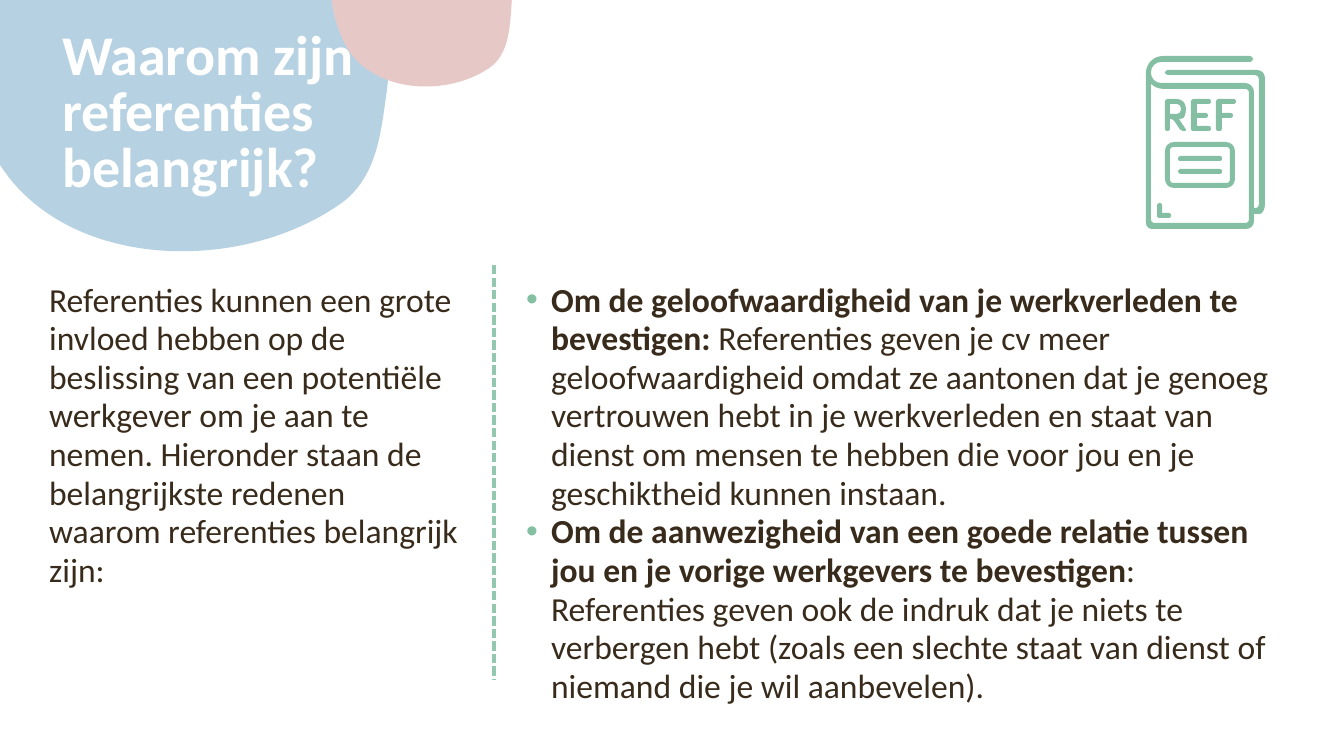
from dataclasses import dataclass
from math import cos, dist, radians, sin

from lxml.etree import SubElement
from pptx import Presentation
from pptx.dml.color import RGBColor
from pptx.enum.dml import MSO_LINE_DASH_STYLE as Dash
from pptx.enum.shapes import MSO_CONNECTOR as Connector
from pptx.enum.text import MSO_ANCHOR as Anchor, MSO_AUTO_SIZE as AutoSize, PP_ALIGN as Align
from pptx.oxml.ns import qn
from pptx.util import Pt

EMU_PER_PX = 914400 / 100.8


@dataclass(frozen=True)
class Theme:
    """Colours, font and type sizes of the slide."""
    font: str = "Calibri"
    ink: str = "382B1B"
    white: str = "FFFFFF"
    blue: str = "B6D1E1"
    pink: str = "E6C8C7"
    green: str = "84BFA4"
    divider: str = "94C7B0"
    title_size: float = 40
    title_leading: float = 40.2
    body_size: float = 24
    body_leading: float = 27.6


THEME = Theme()

TITLE = "Waarom zijn referenties belangrijk?"
INTRO = (
    "Referenties kunnen een grote invloed hebben op de beslissing van een potentiële "
    "werkgever om je aan te nemen. Hieronder staan de belangrijkste redenen waarom "
    "referenties belangrijk zijn:"
)
REASONS = [
    [
        ("Om de geloofwaardigheid van je werkverleden te bevestigen: ", True),
        ("Referenties geven je cv meer geloofwaardigheid omdat ze aantonen dat je genoeg "
         "vertrouwen hebt in je werkverleden en staat van dienst om mensen te hebben die "
         "voor jou en je geschiktheid kunnen instaan.", False),
    ],
    [
        ("Om de aanwezigheid van een goede relatie tussen jou en je vorige werkgevers "
         "te bevestigen", True),
        (": Referenties geven ook de indruk dat je niets te verbergen hebt (zoals een "
         "slechte staat van dienst of niemand die je wil aanbevelen).", False),
    ],
]

BLOB_TURN = 71.8
BLUE_FRAME = (-29, -170, 419, 432)
BLUE_BLOB = [
    [(391, 23)],
    [(389, -34), (371, -91), (309, -117)], [(251, -142), (163, -157), (100, -146)],
    [(-49, -119), (-71, 29), (-8, 151)], [(53, 270), (238, 278), (343, 202)],
    [(374, 178), (380, 140), (385, 104)], [(389, 78), (391, 50), (391, 23)],
]
PINK_FRAME = (337, -91, 176, 181)
PINK_BLOB = [
    [(512, -9)],
    [(511, -34), (504, -57), (479, -69)], [(454, -79), (417, -86), (390, -81)],
    [(328, -69), (319, -7), (345, 44)], [(371, 94), (449, 98), (492, 66)],
    [(505, 55), (508, 39), (510, 24)], [(511, 13), (512, 2), (512, -9)],
]

BOOK_COVER = [
    (1146, 229, 6), (1146, 56, 17), (1253, 56, 3), (1253, 62, 3), (1151, 62, 10),
    (1151, 83, 10), (1254, 83, 9), (1254, 208, 0), (1259, 208, 4), (1259, 75, 4),
    (1165, 75, 3), (1165, 70, 3), (1265, 70, 8), (1265, 214, 10), (1254, 214, 0),
    (1254, 229, 8),
]
BOOK_FACE = [(1151, 84, 0), (1151, 223, 3), (1249, 223, 3), (1249, 89, 3), (1158, 89, 7)]
LETTER_R = [
    (1165, 99, 2), (1186, 99, 9), (1186, 118, 9), (1179, 119, 0), (1187, 131, 2),
    (1181, 131, 2), (1173, 119, 2), (1170, 119, 0), (1170, 131, 2), (1165, 131, 2),
]
R_BOWL = [(1170, 104, 0), (1181, 104, 4), (1181, 114, 4), (1170, 114, 0)]
CORNER_MARK = [
    (1157, 203, 2), (1162, 203, 2), (1162, 213, 0), (1171, 213, 2), (1171, 218, 2),
    (1157, 218, 2),
]


def px(length):
    """Turn pixels into EMU."""
    return round(length * EMU_PER_PX)


def rgb(colour):
    """Read a hexadecimal colour."""
    return RGBColor.from_string(colour)


def blend(start, end, share):
    """Return the point at a share of the way from start to end."""
    return tuple(p + (q - p) * share for p, q in zip(start, end))


def rounded(corners):
    """Return the segments of a polygon whose corners have radii."""
    segments = []
    for index, (x, y, radius) in enumerate(corners):
        corner = (x, y)
        before, after = (
            blend(corner, near[:2], min(radius / dist(corner, near[:2]), 0.5))
            for near in (corners[index - 1], corners[(index + 1) % len(corners)])
        )
        segments.append([before])
        if radius:
            segments.append([blend(before, corner, 0.55), blend(after, corner, 0.55), after])
    return segments


def rectangle(left, top, right, bottom, radius):
    """Return the corners of a rounded rectangle."""
    return [(left, top, radius), (right, top, radius),
            (right, bottom, radius), (left, bottom, radius)]


def add_outline(shapes, colour, frame, contours, turn=0):
    """Draw a filled curved outline in a turned frame; later contours are holes."""
    left, top, width, height = frame
    builder = shapes.build_freeform(px(left), px(top))
    builder.add_line_segments([(px(left + width), px(top)),
                               (px(left + width), px(top + height)),
                               (px(left), px(top + height))])
    shape = builder.convert_to_shape()
    shape.shadow.inherit = False
    shape.fill.solid()
    shape.fill.fore_color.rgb = rgb(colour)
    shape.line.fill.background()
    shape.rotation = turn
    route = shape.element.find(".//" + qn("a:path"))
    for step in list(route):
        route.remove(step)
    cosine, sine = cos(radians(turn)), sin(radians(turn))
    for contour in contours:
        for index, points in enumerate(contour):
            tag = "a:cubicBezTo" if len(points) == 3 else "a:lnTo" if index else "a:moveTo"
            step = SubElement(route, qn(tag))
            for x, y in points:
                dx, dy = x - left - width / 2, y - top - height / 2
                SubElement(step, qn("a:pt"),
                           x=str(px(width / 2 + dx * cosine + dy * sine)),
                           y=str(px(height / 2 - dx * sine + dy * cosine)))
        SubElement(route, qn("a:close"))
    return shape


def add_icon_part(shapes, *polygons):
    """Draw one rounded part of the icon."""
    xs, ys, _ = zip(*polygons[0])
    frame = (min(xs), min(ys), max(xs) - min(xs), max(ys) - min(ys))
    add_outline(shapes, THEME.green, frame, [rounded(polygon) for polygon in polygons])


def add_book(page):
    """Draw the reference book icon."""
    shapes = page.shapes.add_group_shape().shapes
    arms = [(0, 99, 2), (20, 99, 2), (20, 104, 2), (6, 104, 0), (6, 113, 0),
            (17, 113, 2), (17, 118, 2), (6, 118, 0)]
    letter_e = arms + [(6, 126, 0), (20, 126, 2), (20, 131, 2), (0, 131, 2)]
    letter_f = arms + [(6, 131, 2), (0, 131, 2)]
    add_icon_part(shapes, BOOK_COVER, BOOK_FACE)
    add_icon_part(shapes, rectangle(1165, 142, 1235, 188, 9),
                  rectangle(1170, 147, 1230, 183, 3))
    add_icon_part(shapes, LETTER_R, R_BOWL)
    for left, letter in ((1191, letter_e), (1216, letter_f)):
        add_icon_part(shapes, [(left + x, y, radius) for x, y, radius in letter])
    add_icon_part(shapes, CORNER_MARK)
    for top in (156, 169):
        add_icon_part(shapes, rectangle(1178, top, 1222, top + 5, 2))


def add_divider(page, x, top, bottom):
    """Draw the dashed line between the columns."""
    line = page.shapes.add_connector(Connector.STRAIGHT, px(x), px(top), px(x), px(bottom))
    line.line.color.rgb = rgb(THEME.divider)
    line.line.width = Pt(2.25)
    line.line.dash_style = Dash.SQUARE_DOT
    SubElement(line.element.spPr, qn("a:effectLst"))
    return line


def set_bullet(para, bulleted):
    """Give a paragraph a green bullet or none."""
    props = para._p.get_or_add_pPr()
    indent = px(25) if bulleted else 0
    props.set("marL", str(indent))
    props.set("indent", str(-indent))
    if bulleted:
        colour = SubElement(props, qn("a:buClr"))
        SubElement(colour, qn("a:srgbClr"), val=THEME.green)
        SubElement(props, qn("a:buFont"), typeface="Arial")
        SubElement(props, qn("a:buChar"), char="•")
    else:
        SubElement(props, qn("a:buNone"))


def fill_text(box, place, paras, size, leading, colour, bulleted=False):
    """Place a placeholder and write its paragraphs run by run."""
    box.left, box.top, box.width, box.height = map(px, place)
    frame = box.text_frame
    frame.word_wrap = True
    frame.auto_size = AutoSize.NONE
    frame.vertical_anchor = Anchor.TOP
    for index, spans in enumerate(paras):
        para = frame.add_paragraph() if index else frame.paragraphs[0]
        para.alignment = Align.LEFT
        para.line_spacing = Pt(leading)
        para.space_before = para.space_after = Pt(0)
        set_bullet(para, bulleted)
        for text, bold in spans:
            span = para.add_run()
            span.text = text
            span.font.name = THEME.font
            span.font.size = Pt(size)
            span.font.bold = bold
            span.font.color.rgb = rgb(colour)


def main():
    """Build and save the slide."""
    deck = Presentation()
    deck.slide_width, deck.slide_height = px(1344), px(756)
    page = deck.slides.add_slide(deck.slide_layouts[3])
    title, intro, reasons = page.placeholders
    body = (THEME.body_size, THEME.body_leading, THEME.ink)
    fill_text(title, (52, 25, 390, 212), [[(TITLE, True)]],
              THEME.title_size, THEME.title_leading, THEME.white)
    fill_text(intro, (39, 275, 431, 221), [[(INTRO, False)]], *body)
    fill_text(reasons, (516, 275, 785, 416), REASONS, *body, bulleted=True)
    divider = add_divider(page, 494, 265, 679)
    blue_blob = add_outline(page.shapes, THEME.blue, BLUE_FRAME, [BLUE_BLOB], BLOB_TURN)
    for backdrop in (reasons, divider, blue_blob):
        title.element.addprevious(backdrop.element)
    add_book(page)
    add_outline(page.shapes, THEME.pink, PINK_FRAME, [PINK_BLOB], BLOB_TURN)
    deck.save("out.pptx")


if __name__ == "__main__":
    main()
